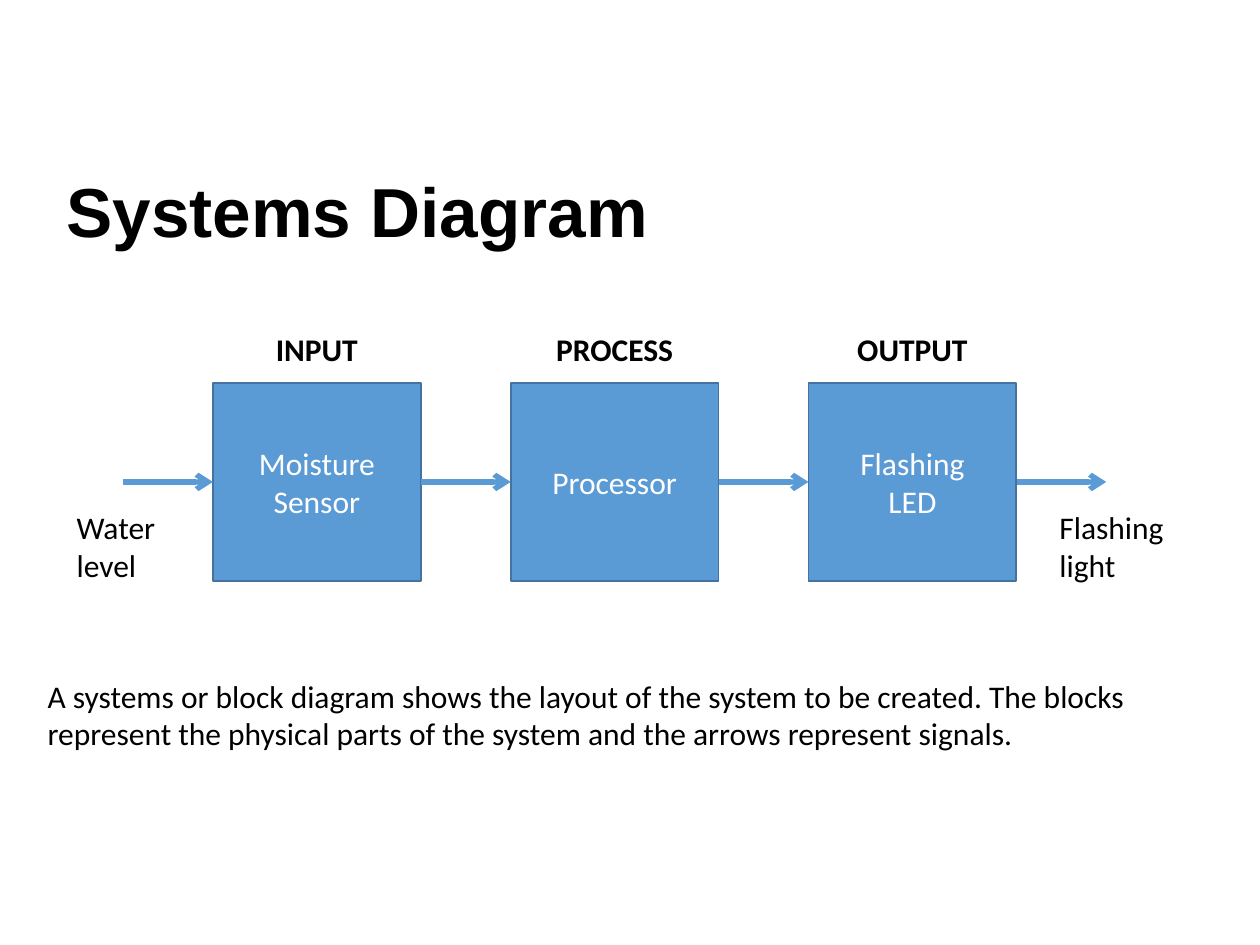
from pptx import Presentation
from pptx.dml.color import RGBColor
from pptx.enum import shapes, text
from pptx.util import Inches, Pt
from lxml import etree

NS = "http://schemas.openxmlformats.org/drawingml/2006/main"
BLUE, EDGE, BLACK, WHITE = "5B9BD5", "43739E", "000000", "FFFFFF"
LEFT, CENTER = text.PP_ALIGN.LEFT, text.PP_ALIGN.CENTER
TOP, MIDDLE = text.MSO_ANCHOR.TOP, text.MSO_ANCHOR.MIDDLE


def color(code):
    return RGBColor.from_string(code)


def write(shape, lines, size=18, face="Calibri", ink=BLACK, bold=False,
          align=LEFT, anchor=TOP, wrap=True, spacing=None):
    frame = shape.text_frame
    frame.word_wrap = wrap
    frame.vertical_anchor = anchor
    for i, line in enumerate(lines):
        para = frame.add_paragraph() if i else frame.paragraphs[0]
        para.alignment = align
        if spacing:
            para.line_spacing = spacing
        run = para.add_run()
        run.text = line
        font = run.font
        font.size, font.name, font.bold = Pt(size), face, bold
        font.color.rgb = color(ink)


def label(slide, box, line, **style):
    area = slide.shapes.add_textbox(*map(Inches, box))
    write(area, [line], **style)


def block(slide, box, lines):
    rect = slide.shapes.add_shape(shapes.MSO_SHAPE.RECTANGLE, *map(Inches, box))
    rect.shadow.inherit = False
    rect.fill.solid()
    rect.fill.fore_color.rgb = color(BLUE)
    rect.line.color.rgb = color(EDGE)
    rect.line.width = Pt(1)
    write(rect, lines, ink=WHITE, align=CENTER, anchor=MIDDLE)


def arrow(slide, x, y, length):
    link = slide.shapes.add_connector(
        shapes.MSO_CONNECTOR.STRAIGHT,
        Inches(x), Inches(y), Inches(x + length), Inches(y))
    link.line.color.rgb = color(BLUE)
    link.line.width = Pt(3)
    etree.SubElement(link.line._get_or_add_ln(), f"{{{NS}}}tailEnd", type="arrow")
    etree.SubElement(link._element.spPr, f"{{{NS}}}effectLst")


def diagram(slide, box):
    """Blocks with headings, and an arrow before, between and after them."""
    left, top, width, height = box
    stages = [("INPUT", 0.87, ["Moisture Sensor"]),
              ("PROCESS", 1.18, ["Processor"]),
              ("OUTPUT", 1.34, ["Flashing", "LED"])]
    side, gap, head = 1.65, 0.71, 0.47
    step = (width - gap) / len(stages)
    tall = height - head
    mid = top + head + tall / 2

    # Blocks and headings
    for i, (name, wide, lines) in enumerate(stages):
        x = left + gap + i * step
        block(slide, (x, top + head, side, tall), lines)
        label(slide, (x + (side - wide) / 2, top, wide, 0.4), name,
              bold=True, align=CENTER, wrap=False)

    # Signals
    for i in range(len(stages) + 1):
        arrow(slide, left + i * step, mid, gap)
    label(slide, (left - 0.47, mid + 0.16, 1.1, 0.71), "Water level")
    label(slide, (left + width - 0.47, mid + 0.16, 1.45, 0.71), "Flashing light")


def main():
    deck = Presentation()
    deck.slide_width, deck.slide_height = Inches(10), Inches(7.5)
    slide = deck.slides.add_slide(deck.slide_layouts[6])

    # Title
    label(slide, (0.43, 1.39, 9, 0.63), "Systems Diagram", size=39.6,
          face="Arial", bold=True, anchor=MIDDLE, spacing=0.9)
    diagram(slide, (0.98, 2.57, 7.8, 2.04))
    # Explanation
    label(slide, (0.28, 5.32, 9.37, 0.71),
          "A systems or block diagram shows the layout of the system to be "
          "created. The blocks represent the physical parts of the system and "
          "the arrows represent signals.")
    deck.save("out.pptx")


if __name__ == "__main__":
    main()
